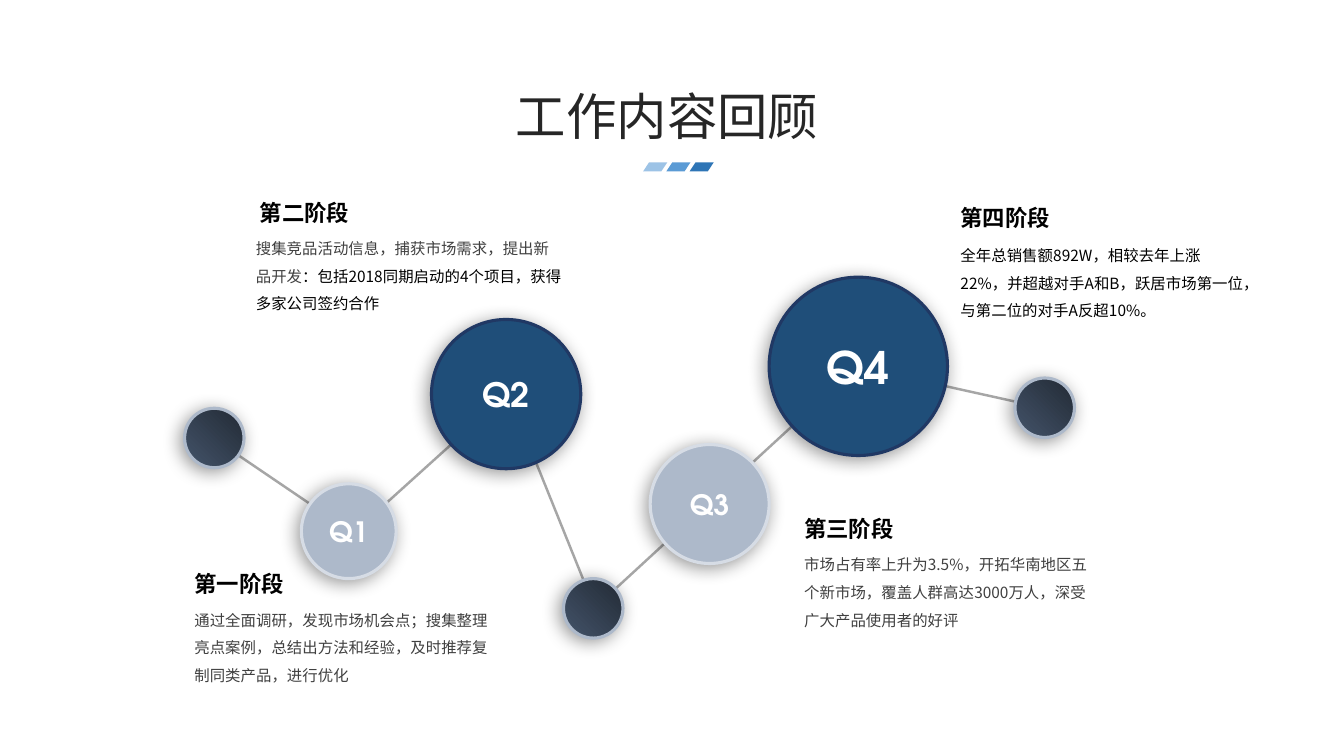
from dataclasses import dataclass
from lxml import etree
from pptx import Presentation
from pptx import util as u
from pptx.dml.color import RGBColor
from pptx.enum import shapes, text
from pptx.oxml.ns import qn


@dataclass(frozen=True)
class Theme:
    ink: str = "000000"
    gray: str = "404040"
    title: str = "262626"
    white: str = "FFFFFF"
    link: str = "A6A6A6"
    navy: str = "1F4E79"
    rim: str = "203864"
    pale: str = "ADB9CA"
    mist: str = "D6DCE5"
    dark: str = "222A35"
    slate: str = "44546A"
    bars: tuple = ("9DC3E6", "5B9BD5", "2E75B6")
    cjk: str = "Noto Sans CJK SC"
    latin: str = "Calibri"
    label: str = "TeX Gyre Adventor"
    big: float = 36
    head: float = 16
    body: float = 11


@dataclass(frozen=True)
class Link:
    x1: float
    y1: float
    x2: float
    y2: float


@dataclass(frozen=True)
class Node:
    x: float
    y: float
    side: float
    rim: str
    fill: str = ""  # empty means the dark gradient
    label: str = ""
    size: float = 20


@dataclass(frozen=True)
class Piece:
    words: str
    color: str


@dataclass(frozen=True)
class Stage:
    name: str
    x: float
    y: float
    left: float
    top: float
    width: float
    height: float
    pieces: tuple


T = Theme()
DOT = 42.5

LINKS = [
    Link(613.4, 262.1, 746.6, 291.6),
    Link(362.9, 280.8, 251.3, 381.6),
    Link(362.9, 280.8, 424.8, 434.2),
    Link(613.4, 260.6, 424.8, 434.2),
    Link(152.6, 313.2, 253.4, 381.6),
]
NODES = [
    Node(131.8, 291.6, DOT, T.pale),
    Node(215.3, 345.6, 67.7, T.mist, T.pale, "Q1"),
    Node(308.2, 228.2, 106.6, T.rim, T.navy, "Q2", 24),
    Node(464.4, 317.5, 85, T.mist, T.pale, "Q3"),
    Node(549.4, 198, 127.4, T.rim, T.navy, "Q4", 32),
    Node(402.5, 413.3, DOT, T.pale),
    Node(725, 270, DOT, T.pale),
]
STAGES = [
    Stage("第一阶段", 131.8, 393.8, 131.8, 426.2, 230.4, 64.8, (
        Piece("通过全面调研，发现市场机会点；搜集整理亮点案例，总结出方法和经验，及时推荐复制同类产品，进行优化", T.gray),)),
    Stage("第二阶段", 178.6, 128.9, 175.7, 160.6, 232.6, 64.8, (
        Piece("搜集竞品活动信息，捕获市场需求，提出新品开发", T.gray),
        Piece("：包括2018同期启动的4个项目，获得多家公司签约合作", T.ink))),
    Stage("第三阶段", 567.4, 355, 567.4, 386.6, 218.2, 85, (
        Piece("市场占有率上升为3.5%，开拓华南地区五个新市场，覆盖人群高达3000万人，深受广大产品使用者的好评", T.gray),)),
    Stage("第四阶段", 679, 132.5, 679, 165.6, 218.2, 64.8, (
        Piece("全年总销售额892W，相较去年上涨22%，并超越对手A和B，跃居市场第一位，与第二位的对手A反超10%。", T.ink),)),
]


def rgb(code: str) -> RGBColor:
    return RGBColor.from_string(code)


def style(run, size: float, color: str, face: str, bold: bool = False) -> None:
    font = run.font
    font.size, font.bold, font.name = u.Pt(size), bold, face
    font.color.rgb = rgb(color)
    east = etree.SubElement(run._r.get_or_add_rPr(), qn("a:ea"))
    east.set("typeface", T.cjk)


def shade(shape) -> None:
    """Fill the effect list with a soft shadow to the lower left."""
    effects = shape._element.spPr.find(qn("a:effectLst"))
    outer = etree.SubElement(effects, qn("a:outerShdw"), blurRad=str(u.Pt(13)),
                             dist=str(u.Pt(3)), dir="8100000", algn="tr", rotWithShape="0")
    color = etree.SubElement(outer, qn("a:srgbClr"), val=T.ink)
    etree.SubElement(color, qn("a:alpha"), val="40000")


def draw_link(slide, link: Link) -> None:
    line = slide.shapes.add_connector(
        shapes.MSO_CONNECTOR.STRAIGHT, u.Pt(link.x1), u.Pt(link.y1), u.Pt(link.x2), u.Pt(link.y2))
    line.line.color.rgb = rgb(T.link)
    line.line.width = u.Pt(1.75)
    etree.SubElement(line._element.spPr, qn("a:effectLst"))


def draw_node(slide, node: Node) -> None:
    disc = slide.shapes.add_shape(
        shapes.MSO_SHAPE.OVAL, u.Pt(node.x), u.Pt(node.y), u.Pt(node.side), u.Pt(node.side))
    if node.fill:
        disc.fill.solid()
        disc.fill.fore_color.rgb = rgb(node.fill)
    else:
        disc.fill.gradient()
        disc.fill.gradient_angle = 225
        for stop, code in zip(disc.fill.gradient_stops, (T.dark, T.slate)):
            stop.color.rgb = rgb(code)
    disc.line.color.rgb = rgb(node.rim)
    disc.line.width = u.Pt(2.25)
    disc.shadow.inherit = False
    shade(disc)
    if node.label:
        frame = disc.text_frame
        frame.text = node.label
        frame.word_wrap = False
        frame.vertical_anchor = text.MSO_ANCHOR.MIDDLE
        para = frame.paragraphs[0]
        para.alignment = text.PP_ALIGN.CENTER
        style(para.runs[0], node.size, T.white, T.label, True)


def draw_bar(slide, rank: int, color: str) -> None:
    bar = slide.shapes.add_shape(
        shapes.MSO_SHAPE.PARALLELOGRAM, u.Pt(459.4 + 16.6 * rank), u.Pt(115.9), u.Pt(17.3), u.Pt(6.5))
    bar.adjustments[0] = 0.66
    bar.fill.solid()
    bar.fill.fore_color.rgb = rgb(color)
    bar.line.fill.background()
    bar.shadow.inherit = False


def add_para(slide, x: float, y: float, width: float, height: float):
    frame = slide.shapes.add_textbox(u.Pt(x), u.Pt(y), u.Pt(width), u.Pt(height)).text_frame
    frame.word_wrap = True
    frame.auto_size = text.MSO_AUTO_SIZE.SHAPE_TO_FIT_TEXT
    return frame.paragraphs[0]


def draw_title(slide, words: str) -> None:
    para = add_para(slide, 361.4, 56.9, 237.6, 51.1)
    para.text = words
    para.alignment = text.PP_ALIGN.JUSTIFY
    style(para.runs[0], T.big, T.title, T.latin)


def draw_stage(slide, stage: Stage) -> None:
    body = add_para(slide, stage.left, stage.top, stage.width, stage.height)
    body.line_spacing = 1.5
    for piece in stage.pieces:
        run = body.add_run()
        run.text = piece.words
        style(run, T.body, piece.color, T.cjk)
    head = add_para(slide, stage.x, stage.y, 90.7, 33.1)
    head.text = stage.name
    head.line_spacing = 1.5
    head.alignment = text.PP_ALIGN.JUSTIFY
    style(head.runs[0], T.head, T.ink, T.cjk, True)


def main() -> None:
    deck = Presentation()
    deck.slide_width, deck.slide_height = u.Pt(960), u.Pt(540)
    slide = deck.slides.add_slide(deck.slide_layouts[6])
    # Timeline: links behind, circles in front
    for link in LINKS:
        draw_link(slide, link)
    for node in NODES:
        draw_node(slide, node)
    # Title with its three slanted bars
    draw_title(slide, "工作内容回顾")
    for rank, color in enumerate(T.bars):
        draw_bar(slide, rank, color)
    # Stage notes
    for stage in STAGES:
        draw_stage(slide, stage)
    deck.save("out.pptx")


if __name__ == "__main__":
    main()
